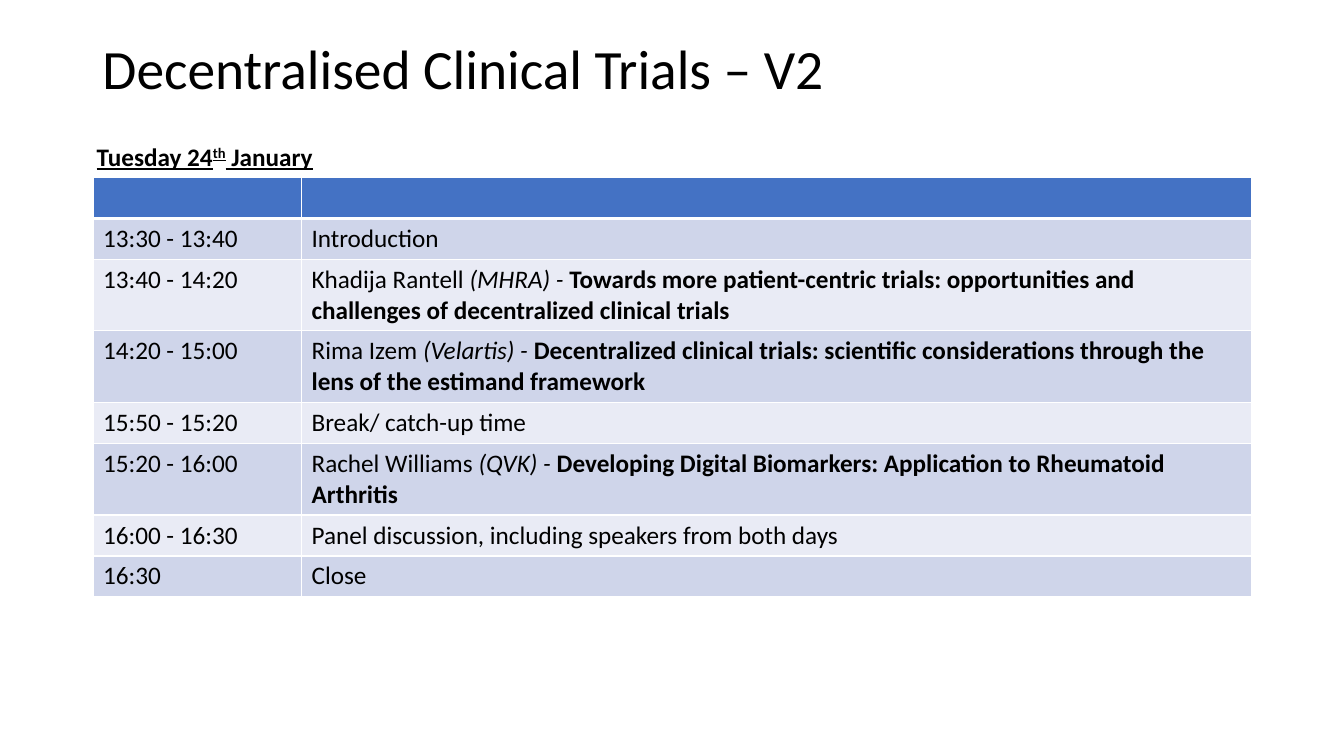
from dataclasses import dataclass

import lxml.etree
import pptx
import pptx.dml.color
import pptx.enum.text
import pptx.oxml.ns
import pptx.util

Pt = pptx.util.Pt
FONT = "Calibri"
COLORS = {
    "text": "000000",
    "header": "4472C4",
    "odd": "CFD5EA",
    "even": "E9EBF5",
    "border": "FFFFFF",
}


@dataclass
class Session:
    time: str
    lead: str
    affiliation: str = ""
    talk: str = ""


SESSIONS = [
    Session("13:30 - 13:40", "Introduction"),
    Session("13:40 - 14:20", "Khadija Rantell ", "(MHRA) - ",
            "Towards more patient-centric trials: opportunities and "
            "challenges of decentralized clinical trials"),
    Session("14:20 - 15:00", "Rima Izem ", "(Velartis) - ",
            "Decentralized clinical trials: scientific considerations "
            "through the lens of the estimand framework"),
    Session("15:50 - 15:20", "Break/ catch-up time"),
    Session("15:20 - 16:00", "Rachel Williams ", "(QVK) - ",
            "Developing Digital Biomarkers: Application to Rheumatoid Arthritis"),
    Session("16:00 - 16:30", "Panel discussion, including speakers from both days"),
    Session("16:30", "Close"),
]


def rgb(name: str) -> pptx.dml.color.RGBColor:
    return pptx.dml.color.RGBColor.from_string(COLORS[name])


def format_paragraph(p, size: float) -> None:
    p.font.name = FONT
    p.font.size = Pt(size)
    p.font.color.rgb = rgb("text")


def add_run(p, text: str):
    r = p.add_run()
    r.text = text
    return r


def style_cell(cell, fill: str, top: int, bottom: int) -> None:
    cell.fill.solid()
    cell.fill.fore_color.rgb = rgb(fill)
    tc_pr = cell._tc.get_or_add_tcPr()
    sides = {"lnL": 1, "lnR": 1, "lnT": top, "lnB": bottom}
    qn = pptx.oxml.ns.qn
    for i, (side, width) in enumerate(sides.items()):
        line = lxml.etree.Element(qn(f"a:{side}"), w=str(Pt(width)))
        fill_el = lxml.etree.SubElement(line, qn("a:solidFill"))
        lxml.etree.SubElement(fill_el, qn("a:srgbClr"), val=COLORS["border"])
        tc_pr.insert(i, line)


def add_title(s) -> None:
    sp = s.shapes.title
    sp.left, sp.top, sp.width, sp.height = Pt(66), Pt(28.8), Pt(828), Pt(88)
    tf = sp.text_frame
    tf.word_wrap = True
    tf.auto_size = pptx.enum.text.MSO_AUTO_SIZE.NONE
    tf.vertical_anchor = pptx.enum.text.MSO_ANCHOR.TOP
    tf.margin_top = Pt(5)
    p = tf.paragraphs[0]
    p.alignment = pptx.enum.text.PP_ALIGN.LEFT
    p.line_spacing = 0.8
    add_run(p, "Decentralised Clinical Trials – V2")
    format_paragraph(p, 39.6)


def add_date(s) -> None:
    sp = s.shapes.add_textbox(Pt(62), Pt(97.2), Pt(487), Pt(29))
    tf = sp.text_frame
    tf.word_wrap = True
    tf.auto_size = pptx.enum.text.MSO_AUTO_SIZE.SHAPE_TO_FIT_TEXT
    p = tf.paragraphs[0]
    add_run(p, "Tuesday 24")
    ordinal = add_run(p, "th")
    ordinal._r.get_or_add_rPr().set("baseline", "30000")
    add_run(p, " January")
    format_paragraph(p, 18)
    p.font.bold = True
    p.font.underline = True


def add_agenda(s, sessions: list[Session]) -> None:
    row_height = 29.2
    count = len(sessions) + 1
    table = s.shapes.add_table(count, 2, Pt(66.4), Pt(126.8), Pt(828),
                               Pt(row_height * count)).table
    for column, width in zip(table.columns, (149, 679)):
        column.width = Pt(width)
    for i, row in enumerate(table.rows):
        row.height = Pt(row_height)
        fill = "header" if i == 0 else "odd" if i % 2 else "even"
        for cell in row.cells:
            style_cell(cell, fill, 3 if i == 1 else 1, 3 if i == 0 else 1)
            format_paragraph(cell.text_frame.paragraphs[0], 18)
    for i, session in enumerate(sessions, 1):
        add_run(table.cell(i, 0).text_frame.paragraphs[0], session.time)
        p = table.cell(i, 1).text_frame.paragraphs[0]
        add_run(p, session.lead)
        if session.talk:
            add_run(p, session.affiliation).font.italic = True
            add_run(p, session.talk).font.bold = True


def main() -> None:
    prs = pptx.Presentation()
    prs.slide_width, prs.slide_height = Pt(960), Pt(540)
    s = prs.slides.add_slide(prs.slide_layouts.get_by_name("Title Only"))
    add_agenda(s, SESSIONS)
    add_title(s)
    add_date(s)
    prs.save("out.pptx")


if __name__ == "__main__":
    main()
